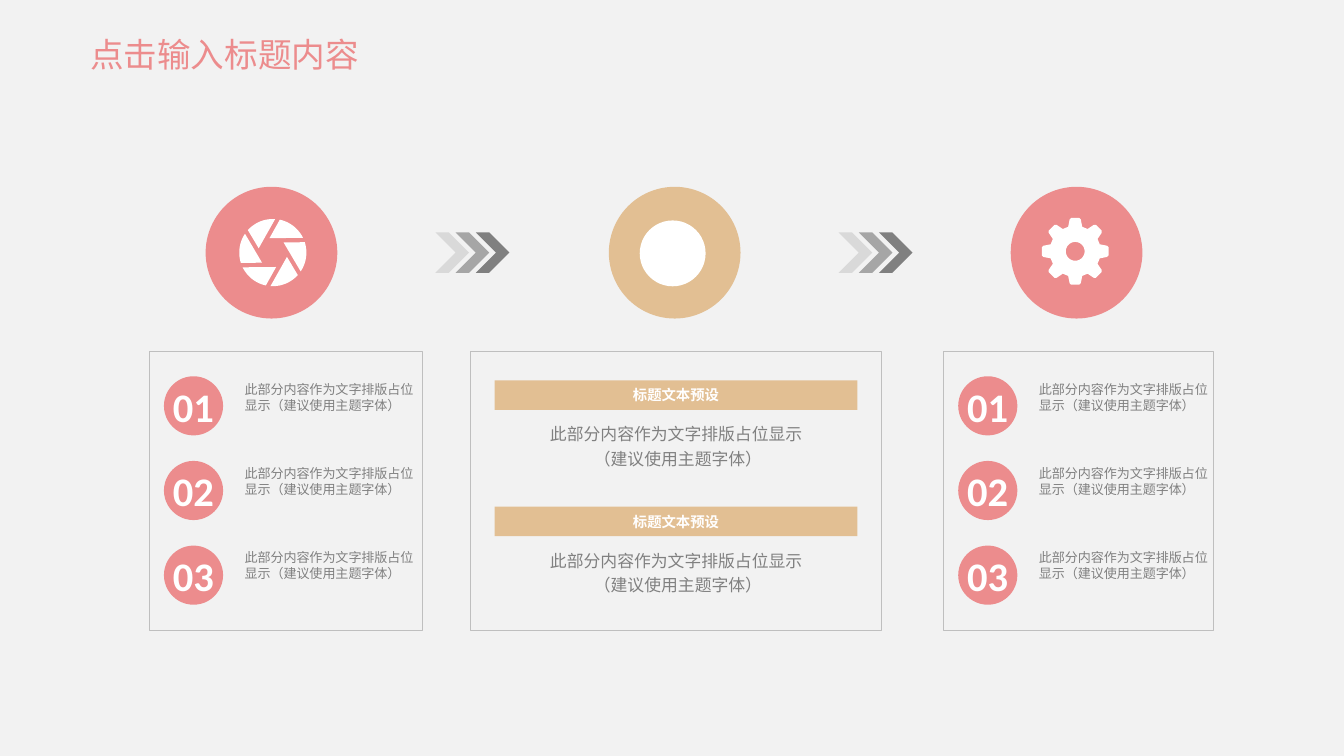
"""Build a three-column process slide with icons, chevrons and text cards."""
from math import cos, radians, sin

from pptx import Presentation
from pptx.dml.color import RGBColor
from pptx.enum.shapes import MSO_SHAPE
from pptx.enum.text import MSO_ANCHOR, MSO_AUTO_SIZE, PP_ALIGN
from pptx.util import Inches, Pt

OVAL, RECT, CHEVRON = MSO_SHAPE.OVAL, MSO_SHAPE.RECTANGLE, MSO_SHAPE.CHEVRON
MIDDLE, TOP = MSO_ANCHOR.MIDDLE, MSO_ANCHOR.TOP
CENTER, LEFT = PP_ALIGN.CENTER, PP_ALIGN.LEFT
FIXED = MSO_AUTO_SIZE.NONE
PINK, TAN = RGBColor(0xEC, 0x8C, 0x8D), RGBColor(0xE2, 0xBF, 0x93)
PAPER, WHITE = RGBColor(0xF2, 0xF2, 0xF2), RGBColor(0xFF, 0xFF, 0xFF)
EDGE, GRAY = RGBColor(0xBF, 0xBF, 0xBF), RGBColor(0x80, 0x80, 0x80)
SHADES = (RGBColor(0xD9, 0xD9, 0xD9), RGBColor(0xA6, 0xA6, 0xA6), GRAY)

TITLE = "点击输入标题内容"
HEAD = "标题文本预设"
BODY = ("此部分内容作为文字排版占位显示", " （建议使用主题字体）")
NOTE = ("此部分内容作为文字排版占位", "显示（建议使用主题字体）")
NUMBERS = ("01", "02", "03")
DISCS = ((1.53, PINK), (4.53, TAN), (7.52, PINK))
ARROWS = (3.24, 6.24)
LISTS = ((1.11, 2.03), (7.02, 2.01))
BARS = (2.83, 3.77)

TITLE_FMT = {"size": Pt(18), "name": "Noto Sans CJK SC", "bold": False}
HEAD_FMT = {"size": Pt(7.7), "name": "Calibri", "bold": True}
BODY_FMT = {"size": Pt(9), "name": "Calibri"}
NOTE_FMT = {"size": Pt(7), "name": "Calibri"}
NUM_FMT = {"size": Pt(21.7), "name": "Calibri", "bold": True}


def paint(shape, fill, line=None):
    """Set flat fill and an optional hairline."""
    shape.shadow.inherit = False
    shape.fill.solid()
    shape.fill.fore_color.rgb = fill
    if line is None:
        shape.line.fill.background()
    else:
        shape.line.color.rgb = line
        shape.line.width = Pt(0.25)


def put(slide, kind, at, fill, line=None):
    """Add a painted preset shape."""
    shape = slide.shapes.add_shape(kind, *map(Inches, at))
    paint(shape, fill, line)
    return shape


def write(shape, lines, fmt, color, align=CENTER, anchor=MIDDLE,
          inset=(0, 0, 0, 0), wrap=True, space=None):
    """Write lines into one paragraph with line breaks between them."""
    frame = shape.text_frame
    sides = ("left", "top", "right", "bottom")
    values = {"margin_" + side: Inches(gap) for side, gap in zip(sides, inset)}
    values.update(word_wrap=wrap, vertical_anchor=anchor, auto_size=FIXED)
    for key, value in values.items():
        setattr(frame, key, value)
    para = frame.paragraphs[0]
    para.alignment = align
    if space:
        para.line_spacing = space
    for i, line in enumerate(lines):
        if i:
            para.add_line_break()
        run = para.add_run()
        run.text = line
        for key, value in fmt.items():
            setattr(run.font, key, value)
        run.font.color.rgb = color


def label(slide, at, *args, **kwargs):
    """Add a text box and write into it."""
    write(slide.shapes.add_textbox(*map(Inches, at)), *args, **kwargs)


def trace(slide, mid, rings):
    """Draw white closed contours given as (degrees, radius) points."""
    x, y = mid
    rings = [[(Inches(x + r * cos(radians(a))), Inches(y - r * sin(radians(a))))
              for a, r in ring] for ring in rings]
    path = slide.shapes.build_freeform(*rings[0][0], scale=1.0)
    for i, ring in enumerate(rings):
        if i:
            path.move_to(*ring[0])
        path.add_line_segments(ring[1:], close=True)
    paint(path.convert_to_shape(), WHITE)


def draw_icons(slide):
    """Draw the shutter, the plain dot and the gear."""
    blades = [[(turn + a, 0.25) for a in range(86, 139, 4)] + [(turn + 163, 0.11)]
              for turn in range(0, 360, 60)]
    trace(slide, (2.03, 1.88), blades)
    put(slide, OVAL, (4.76, 1.64, 0.49, 0.49), WHITE)
    tooth = ((-16, 0.19), (-10, 0.24), (-7, 0.25), (7, 0.25), (10, 0.24), (16, 0.19))
    rim = [(turn + a, r) for turn in range(0, 360, 45) for a, r in tooth]
    hole = [(a, 0.07) for a in range(360, 0, -10)]
    trace(slide, (8, 1.87), [rim, hole])


def draw_list(slide, left, width):
    """Draw a card of numbered notes."""
    put(slide, RECT, (left, 2.61, width, 2.08), PAPER, EDGE)
    for i, number in enumerate(NUMBERS):
        disc = put(slide, OVAL, (left + 0.11, 2.8 + 0.63 * i, 0.44, 0.44), PINK)
        write(disc, [number], NUM_FMT, WHITE, wrap=False)
        label(slide, (left + 0.55, 2.84 + 0.625 * i, width - 0.55, 0.36), NOTE, NOTE_FMT,
              GRAY, align=LEFT, anchor=TOP, inset=(0.16, 0, 0, 0))


def draw_center(slide):
    """Draw the middle card with two headed texts."""
    put(slide, RECT, (3.5, 2.61, 3.06, 2.08), PAPER, EDGE)
    for top in BARS:
        bar = put(slide, RECT, (3.68, top, 2.7, 0.22), TAN)
        write(bar, [HEAD], HEAD_FMT, WHITE, wrap=False, inset=(0.1, 0.05, 0.1, 0.05))
        label(slide, (3.68, top + 0.22, 2.7, 0.51), BODY, BODY_FMT, GRAY, space=1.2)


def main():
    """Build and save the slide."""
    deck = Presentation()
    deck.slide_width = Inches(10)
    deck.slide_height = deck.slide_width * 9 // 16
    slide = deck.slides.add_slide(deck.slide_layouts[5])
    slide.background.fill.solid()
    slide.background.fill.fore_color.rgb = PAPER
    title = slide.shapes.title
    title.left, title.top, title.width, title.height = map(Inches, (0.67, 0.19, 2.33, 0.42))
    write(title, [TITLE], TITLE_FMT, PINK, align=LEFT, inset=(0, 0.05, 0, 0.05))
    for left in ARROWS:
        for i, shade in enumerate(SHADES):
            arrow = put(slide, CHEVRON, (left + 0.15 * i, 1.73, 0.25, 0.3), shade)
            arrow.adjustments[0] = 0.6
    for left, color in DISCS:
        put(slide, OVAL, (left, 1.39, 0.98, 0.98), color)
    draw_icons(slide)
    draw_center(slide)
    for left, width in LISTS:
        draw_list(slide, left, width)
    deck.save("out.pptx")


if __name__ == "__main__":
    main()
